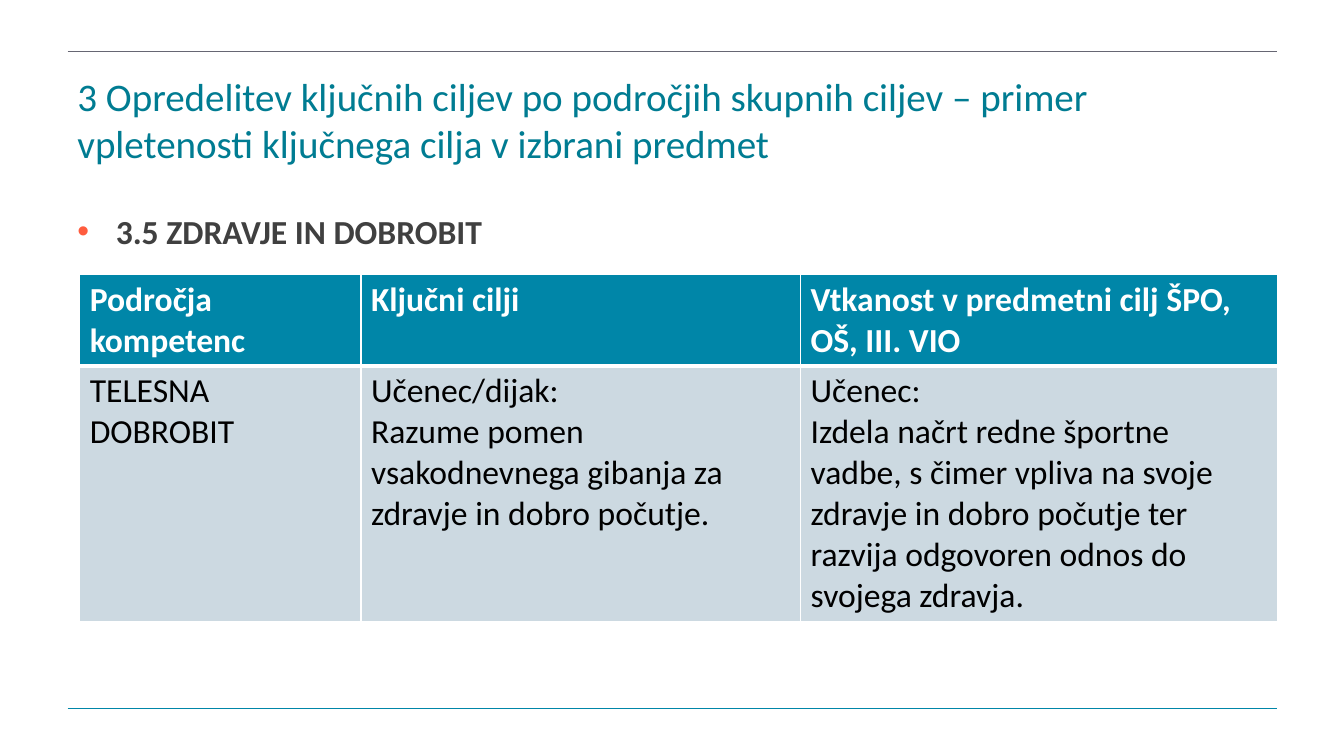
from lxml.etree import SubElement
from pptx import Presentation
from pptx.dml.color import RGBColor
from pptx.enum.shapes import MSO_CONNECTOR
from pptx.oxml.ns import qn
from pptx.util import Inches, Pt

TEAL, PALE, WHITE = "0086A8", "CCD9E1", "FFFFFF"
HEADINGS = ["Področja kompetenc", "Ključni cilji", "Vtkanost v predmetni cilj ŠPO, OŠ, III. VIO"]
GOALS = [
    "TELESNA DOBROBIT",
    "Učenec/dijak:\nRazume pomen vsakodnevnega gibanja za zdravje in dobro počutje.",
    "Učenec:\nIzdela načrt redne športne vadbe, s čimer vpliva na svoje zdravje in dobro počutje "
    "ter razvija odgovoren odnos do svojega zdravja.",
]


def rgb(value):
    return RGBColor.from_string(value)


class CurriculumSlide:
    font = "Calibri"

    def __init__(self, slide):
        self.slide = slide

    def style(self, frame, size, color, bold=False):
        for paragraph in frame.paragraphs:
            for run in paragraph.runs:
                run.font.name = self.font
                run.font.size = Pt(size)
                run.font.bold = bold
                run.font.color.rgb = rgb(color)

    def rule(self, y, color, width):
        line = self.slide.shapes.add_connector(
            MSO_CONNECTOR.STRAIGHT, Inches(0.67), Inches(y), Inches(12.67), Inches(y))
        line.line.color.rgb = rgb(color)
        line.line.width = Pt(width)
        SubElement(line._element.spPr, qn("a:effectLst"))

    def text(self, words, top, width, height, size, color, bold=False, bullet=None):
        """Add a text box at the left margin; bullet is the bullet's colour."""
        box = self.slide.shapes.add_textbox(Inches(0.67), Inches(top), Inches(width), Inches(height))
        frame = box.text_frame
        frame.word_wrap = True
        frame.text = words
        if bullet:
            properties = frame.paragraphs[0]._p.get_or_add_pPr()
            properties.set("marL", str(Inches(0.38)))
            properties.set("indent", str(-Inches(0.38)))
            bullet_color = SubElement(properties, qn("a:buClr"))
            SubElement(bullet_color, qn("a:srgbClr"), val=bullet)
            SubElement(properties, qn("a:buFont"), typeface="Arial")
            SubElement(properties, qn("a:buChar"), char="•")
        self.style(frame, size, color, bold)

    def border(self, cell, side, width):
        edge = SubElement(cell._tc.get_or_add_tcPr(), qn(f"a:ln{side}"), w=str(Pt(width)))
        fill = SubElement(edge, qn("a:solidFill"))
        SubElement(fill, qn("a:srgbClr"), val=WHITE)

    def table(self, rows, left, top, widths, heights):
        table = self.slide.shapes.add_table(
            len(rows), len(widths), Inches(left), Inches(top),
            Inches(sum(widths)), Inches(sum(heights))).table
        for column, width in zip(table.columns, widths):
            column.width = Inches(width)
        for r, (row, height) in enumerate(zip(rows, heights)):
            table.rows[r].height = Inches(height)
            header = r == 0
            for c, words in enumerate(row):
                cell = table.cell(r, c)
                cell.text_frame.text = words
                self.style(cell.text_frame, 24, WHITE if header else "000000", header)
                for side in "LR":
                    self.border(cell, side, 1)
                self.border(cell, "T", 1 if header else 3)
                self.border(cell, "B", 3 if header else 1)
                cell.fill.solid()
                cell.fill.fore_color.rgb = rgb(TEAL if header else PALE)


def main():
    deck = Presentation()
    deck.slide_width, deck.slide_height = Inches(13.33), Inches(7.5)
    page = CurriculumSlide(deck.slides.add_slide(deck.slide_layouts[6]))
    page.rule(7.03, TEAL, 1)
    page.rule(0.51, "666673", 0.5)
    page.text("3 Opredelitev ključnih ciljev po področjih skupnih ciljev – primer "
              "vpletenosti ključnega cilja v izbrani predmet", 0.67, 11.5, 1.05, 27.9, "007C92")
    page.text("3.5 ZDRAVJE IN DOBROBIT", 2.04, 12, 0.5, 24, "404040", True, "FF5C3E")
    page.table([HEADINGS, GOALS], 0.79, 2.72, [2.79, 4.36, 4.73], [0.91, 2.54])
    deck.save("out.pptx")


if __name__ == "__main__":
    main()
